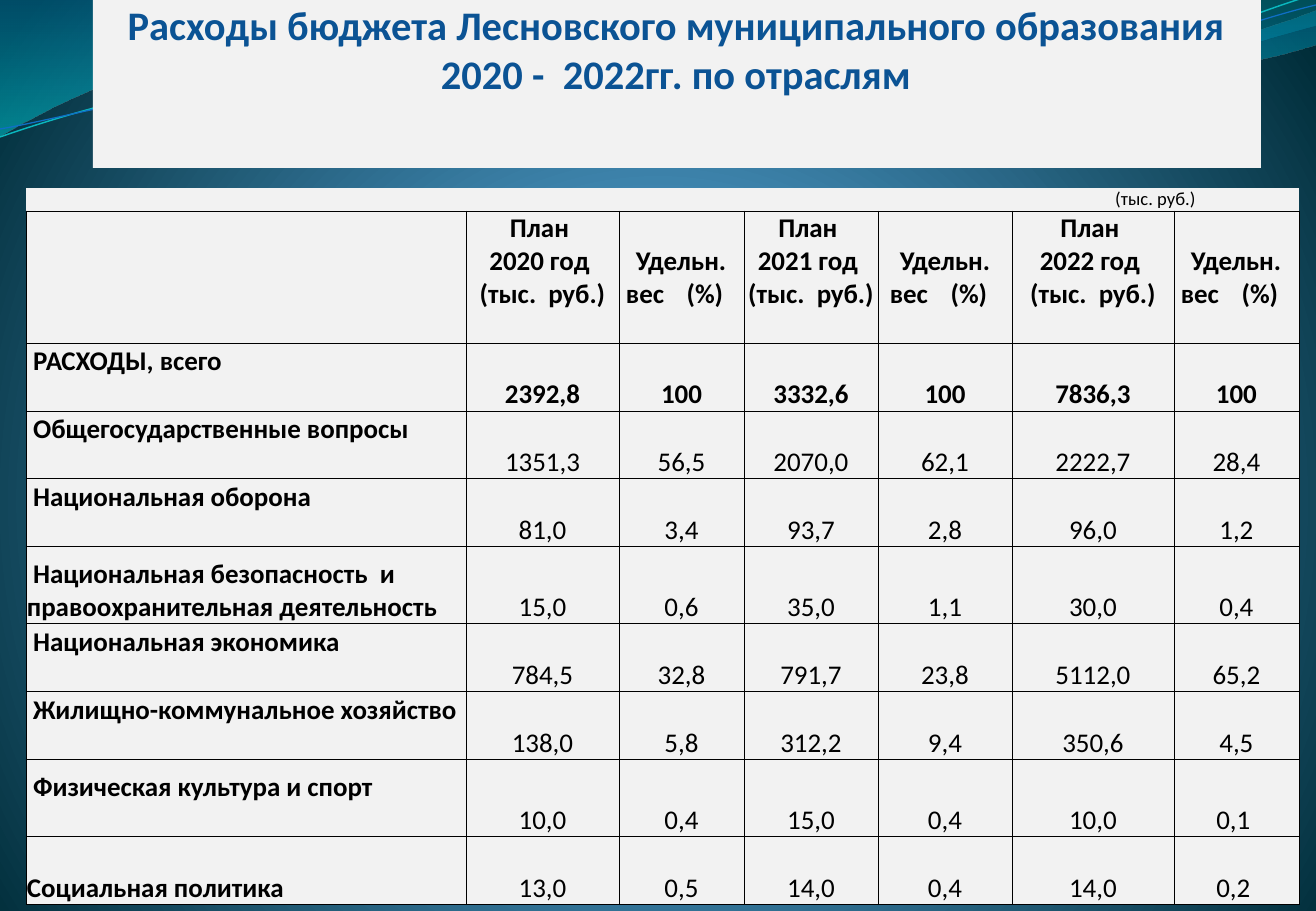
"""Builds the slide with budget spending by sector for 2020 to 2022."""
import pptx
import pptx.dml.color
import pptx.enum.shapes
import pptx.enum.text
import pptx.oxml
import pptx.oxml.ns
import pptx.util

ALIGN = pptx.enum.text.PP_ALIGN
ANCHOR = pptx.enum.text.MSO_ANCHOR
EMU_PER_PX = 914400 / 121.5
SLIDE = (1316, 911)
FONT, INK, TITLE_INK, PAPER = "Calibri", "000000", "0B5394", "F2F2F2"

TITLE = "Расходы бюджета Лесновского муниципального образования 2020 -  2022гг. по отраслям"
TITLE_BOX = (93, 0, 1168, 168)
UNIT = "(тыс. руб.)"
YEARS = (2020, 2021, 2022)
PLAN_HEAD = "План \n{} год \n(тыс.  руб.)"
SHARE_HEAD = "Удельн. вес\t(%)"
SECTORS = [
    (" РАСХОДЫ, всего", "2392,8", "100", "3332,6", "100", "7836,3", "100"),
    (" Общегосударственные вопросы", "1351,3", "56,5", "2070,0", "62,1", "2222,7", "28,4"),
    (" Национальная оборона", "81,0", "3,4", "93,7", "2,8", "96,0", "1,2"),
    (" Национальная безопасность  и правоохранительная деятельность",
     "15,0", "0,6", "35,0", "1,1", "30,0", "0,4"),
    (" Национальная экономика", "784,5", "32,8", "791,7", "23,8", "5112,0", "65,2"),
    (" Жилищно-коммунальное хозяйство", "138,0", "5,8", "312,2", "9,4", "350,6", "4,5"),
    (" Физическая культура и спорт", "10,0", "0,4", "15,0", "0,4", "10,0", "0,1 "),
    ("Социальная политика", "13,0", "0,5", "14,0", "0,4", "14,0", "0,2 "),
]
LOW_LABELS = (SECTORS[3][0], SECTORS[7][0])
TABLE_AT = (26, 188)
COLUMNS = (440, 153, 125, 134, 134, 162, 125)
ROWS = (23, 132, 68, 68, 68, 77, 68, 68, 77, 68)
TEXT_LINE, SHARE_WIDTH, SHARE_INDENT = 33, 110, 10

BACKDROP = [(0, "4AA0D6", 100), (25, "4C98C7", 100), (100, "002C38", 100)]
GLOW = '<a:path path="circle"><a:fillToRect l="10000" t="110000" r="10000" b="100000"/></a:path>'
DOWNWARD = '<a:lin ang="5400000" scaled="1"/>'
WAVES = [
    ([(0, -1), (580, -1), (626, 21, 874, 77, 999, 77), (1123, 77, 1261, 32, 1316, 11),
      (1318, 44), (1294, 53, 1145, 92, 982, 91), (819, 91, 503, 34, 339, 41),
      (170, 43, 61, 101, -1, 137)], [(0, "0074A1", 45), (100, "00C6CF", 55)]),
    ([(631, -1), (671, 13, 898, 75, 1012, 79), (1127, 84, 1266, 39, 1316, 26), (1316, 0)],
     [(0, "00A1A9", 30), (80, "008BBF", 45)]),
]
STRANDS = [
    ([(0, 137), (63, 115, 208, 70, 365, 64), (520, 57, 780, 107, 938, 96),
      (1096, 84, 1236, 17, 1313, -5)], "0AB8BF", 0.85),
    ([(0, 129), (62, 119, 215, 75, 373, 69), (530, 63, 786, 101, 943, 90),
      (1101, 80, 1238, 23, 1316, 5)], "0F6FC6", 0.75),
]


def px(length):
    return pptx.util.Emu(round(length * EMU_PER_PX))


def colour(value):
    return pptx.dml.color.RGBColor.from_string(value)


def xml(tag, attributes="", inner=""):
    namespace = pptx.oxml.ns.nsdecls("a")
    return pptx.oxml.parse_xml(f"<a:{tag} {namespace} {attributes}>{inner}</a:{tag}>")


def blend(properties, stops, direction):
    marks = "".join(
        f'<a:gs pos="{at * 1000}"><a:srgbClr val="{value}">'
        f'<a:alpha val="{opacity * 1000}"/></a:srgbClr></a:gs>'
        for at, value, opacity in stops)
    gradient = xml("gradFill", 'rotWithShape="1"', f"<a:gsLst>{marks}</a:gsLst>{direction}")
    properties.replace(properties.find(pptx.oxml.ns.qn("a:noFill")), gradient)


def write(frame, text, size=16, bold=False, ink=INK, align=ALIGN.CENTER):
    frame.word_wrap = True
    for number, line in enumerate(text.split("\n")):
        paragraph = frame.paragraphs[0] if number == 0 else frame.add_paragraph()
        paragraph.alignment = align
        if not line:
            paragraph._p.append(xml("endParaRPr", f'sz="{size * 100}"'))
            continue
        if "\t" in line:
            paragraph.alignment = ALIGN.LEFT
            settings = paragraph._p.get_or_add_pPr()
            settings.set("marL", "0")
            settings.set("indent", str(px(SHARE_INDENT)))
            stop = f'<a:tab pos="{px(SHARE_WIDTH)}" algn="r"/>'
            settings.append(xml("tabLst", "", stop))
        run = paragraph.add_run()
        run.text = line
        run.font.name, run.font.size, run.font.bold = FONT, pptx.util.Pt(size), bold
        run.font.color.rgb = colour(ink)


def trace(slide, steps, closed):
    corners = [(px(step[n]), px(step[n + 1])) for step in steps for n in range(0, len(step), 2)]
    builder = slide.shapes.build_freeform(*corners[0])
    builder.add_line_segments(corners[1:], close=closed)
    shape = builder.convert_to_shape()
    segments = iter(list(shape._element.iter(pptx.oxml.ns.qn("a:lnTo"))))
    for step in steps[1:]:
        group = [next(segments) for _ in range(len(step) // 2)]
        if len(group) == 3:
            curve = xml("cubicBezTo")
            group[0].addprevious(curve)
            for segment in group:
                curve.append(segment[0])
                segment.getparent().remove(segment)
    shape.shadow.inherit = False
    shape.fill.background()
    return shape


def draw_backdrop(slide):
    slide.background.fill.background()
    blend(slide._element.cSld.bg.bgPr, BACKDROP, GLOW)
    for steps, stops in WAVES:
        wave = trace(slide, steps, True)
        wave.line.fill.background()
        blend(wave._element.spPr, stops, DOWNWARD)
    for steps, ink, width in STRANDS:
        strand = trace(slide, steps, False)
        strand.line.color.rgb = colour(ink)
        strand.line.width = pptx.util.Pt(width)


def draw_title(slide):
    title = slide.shapes.add_shape(
        pptx.enum.shapes.MSO_SHAPE.RECTANGLE, *map(px, TITLE_BOX))
    title.shadow.inherit = False
    title.fill.solid()
    title.fill.fore_color.rgb = colour(PAPER)
    title.line.fill.background()
    frame = title.text_frame
    frame.margin_left = frame.margin_top = frame.margin_bottom = 0
    frame.margin_right = px(2)
    frame.vertical_anchor = ANCHOR.TOP
    write(frame, TITLE, size=24, bold=True, ink=TITLE_INK)


def style_cell(cell, row, left=1, top=1, right=1, bottom=0):
    cell.margin_left, cell.margin_top = px(left), px(top)
    cell.margin_right, cell.margin_bottom = px(right), px(bottom)
    cell.vertical_anchor = ANCHOR.TOP if row == 1 else ANCHOR.BOTTOM
    for side in "LRTB":
        ruled = row > 0 or side == "B"
        paint = f'<a:solidFill><a:srgbClr val="{INK}"/></a:solidFill>' if ruled else "<a:noFill/>"
        cell._tc.get_or_add_tcPr().append(xml(f"ln{side}", 'w="6350"', paint))
    cell.fill.solid()
    cell.fill.fore_color.rgb = colour(PAPER)


def draw_table(slide):
    heads = [""]
    for year in YEARS:
        heads += [PLAN_HEAD.format(year), SHARE_HEAD]
    content = [("",) * 5 + (UNIT, ""), heads] + SECTORS
    table = slide.shapes.add_table(
        len(ROWS), len(COLUMNS), *map(px, TABLE_AT + (sum(COLUMNS), sum(ROWS)))).table
    table.first_row = table.horz_banding = False
    for column, width in zip(table.columns, COLUMNS):
        column.width = px(width)
    for row, height in zip(table.rows, ROWS):
        row.height = px(height)
    for row, texts in enumerate(content):
        for column, text in enumerate(texts):
            cell = table.cell(row, column)
            margins = {} if row else {"top": 0}
            if text == SHARE_HEAD:
                side = (COLUMNS[column] - SHARE_WIDTH) // 2
                margins = {"left": side, "right": side - 2, "top": TEXT_LINE + 1}
            elif row > 1 and column == 0 and text not in LOW_LABELS:
                margins = {"bottom": TEXT_LINE}
            style_cell(cell, row, **margins)
            write(cell.text_frame, text, size=16 if row else 11,
                  bold=row in (1, 2) or (row > 2 and column == 0),
                  align=ALIGN.LEFT if column == 0 else ALIGN.CENTER)
    table.cell(0, 5).merge(table.cell(0, 6))


def main():
    deck = pptx.Presentation()
    deck.slide_width, deck.slide_height = map(px, SLIDE)
    slide = deck.slides.add_slide(deck.slide_layouts[6])
    draw_backdrop(slide)
    draw_title(slide)
    draw_table(slide)
    deck.save("out.pptx")


if __name__ == "__main__":
    main()
